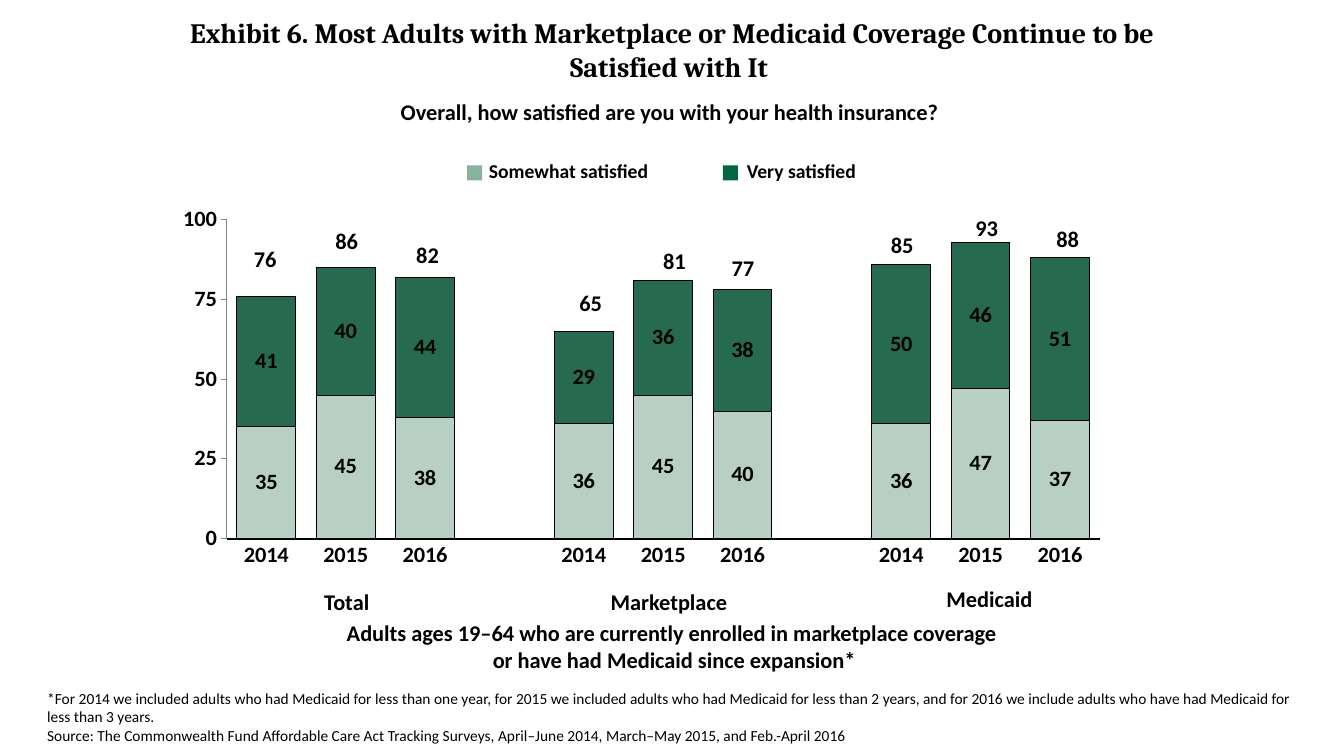
from pptx import Presentation
from pptx.chart.data import CategoryChartData
from pptx.dml.color import RGBColor
from pptx.enum.chart import XL_CHART_TYPE, XL_TICK_MARK
from pptx.enum.shapes import MSO_SHAPE
from pptx.enum.text import MSO_ANCHOR, MSO_AUTO_SIZE, PP_ALIGN
from pptx.oxml import parse_xml
from pptx.oxml.ns import nsdecls, qn
from pptx.util import Cm, Pt
from lxml.etree import SubElement

BLACK = "000000"
BODY = {"name": "Calibri", "size": Pt(16), "bold": True}
LEGEND = {**BODY, "size": Pt(14)}
NOTE = {**BODY, "size": Pt(11), "bold": False}
HEADING = {"name": "Cambria", "size": Pt(20), "bold": True}

YEARS = ["2014", "2015", "2016"]
# name, colour, opacity in percent, values
ANSWERS = [
    ("Somewhat satisfied", "B8D0C4", 100,
     [35, 45, 38, None, 36, 45, 40, None, 36, 47, 37]),
    ("Very satisfied", "005032", 85,
     [41, 40, 44, None, 29, 36, 38, None, 50, 46, 51]),
]
# text, left, top
TOTALS = [
    ("76", 6.15, 6.05), ("86", 8.2, 5.61), ("82", 10.24, 5.94),
    ("65", 14.35, 7.16), ("81", 16.46, 6.1), ("77", 18.19, 6.27),
    ("85", 22.2, 5.69), ("93", 24.33, 5.26), ("88", 26.37, 5.56),
]
# text, left, top, width
GROUPS = [
    ("Total", 7.92, 14.69, 2.06),
    ("Marketplace", 15.14, 14.69, 3.96),
    ("Medicaid", 23.6, 14.61, 2.9),
]
# text, colour, swatch left, label left, label width
KEYS = [
    ("Somewhat satisfied", "89B19C", 11.77, 12.07, 4.57),
    ("Very satisfied", "00673F", 18.22, 18.57, 3.3),
]


def rgb(value):
    return RGBColor.from_string(value)


def format_font(font, values):
    for name, value in values.items():
        setattr(font, name, value)
    font.color.rgb = rgb(BLACK)


def write(frame, paragraphs, values, align):
    frame.text = "\n".join(paragraphs)
    for para in frame.paragraphs:
        para.alignment = align
        for span in para.runs:
            format_font(span.font, values)


def add_text(page, paragraphs, left, top, width, height=0.94,
             values=BODY, align=PP_ALIGN.LEFT, wrap=True):
    box = page.shapes.add_textbox(Cm(left), Cm(top), Cm(width), Cm(height))
    frame = box.text_frame
    write(frame, paragraphs, values, align)
    frame.word_wrap = wrap
    frame.auto_size = MSO_AUTO_SIZE.SHAPE_TO_FIT_TEXT


def set_title(page, text):
    title = page.shapes.title
    place = {"left": Cm(4.24), "top": Cm(0.23), "width": Cm(25.4), "height": Cm(2.03)}
    for name, value in place.items():
        setattr(title, name, value)
    write(title.text_frame, [text], HEADING, PP_ALIGN.CENTER)
    title.text_frame.vertical_anchor = MSO_ANCHOR.MIDDLE


def add_legend_key(page, text, colour, swatch_left, label_left, width):
    swatch = page.shapes.add_shape(
        MSO_SHAPE.RECTANGLE, Cm(swatch_left), Cm(4.17), Cm(0.38), Cm(0.38))
    swatch.shadow.inherit = False
    swatch.fill.solid()
    swatch.fill.fore_color.rgb = rgb(colour)
    swatch.line.fill.background()
    add_text(page, [text], label_left, 3.89, width, 0.86, LEGEND, wrap=False)


def set_line(line, colour, width):
    line.color.rgb = rgb(colour)
    line.width = Pt(width)


def set_plot_area(chart, x, y, w, h):
    """Fix the inner plot area as fractions of the chart."""
    area = chart._chartSpace.chart.plotArea
    for old in area.findall(qn("c:layout")):
        area.remove(old)
    sizes = "".join(f'<c:{key} val="{value}"/>'
                    for key, value in zip("xywh", (x, y, w, h)))
    area.insert(0, parse_xml(
        f'<c:layout {nsdecls("c")}><c:manualLayout><c:layoutTarget val="inner"/>'
        f'<c:xMode val="edge"/><c:yMode val="edge"/>{sizes}'
        '</c:manualLayout></c:layout>'))


def format_series(series, colour, opacity):
    fill = series.format.fill
    fill.solid()
    fill.fore_color.rgb = rgb(colour)
    tint = series._element.find(qn("c:spPr")).find(qn("a:solidFill"))[0]
    SubElement(tint, qn("a:alpha")).set("val", str(opacity * 1000))
    set_line(series.format.line, BLACK, 0.75)
    labels = series.data_labels
    labels.show_value = True
    format_font(labels.font, BODY)


def format_axes(chart):
    years = chart.category_axis
    years.major_tick_mark = XL_TICK_MARK.NONE
    set_line(years.format.line, BLACK, 1.5)
    percent = chart.value_axis
    scale = {"minimum_scale": 0, "maximum_scale": 100, "major_unit": 25,
             "has_major_gridlines": False, "major_tick_mark": XL_TICK_MARK.OUTSIDE}
    for name, value in scale.items():
        setattr(percent, name, value)
    percent.tick_labels.number_format = "0"
    percent.tick_labels.number_format_is_linked = False
    set_line(percent.format.line, "868686", 0.75)


def add_satisfaction_chart(page):
    data = CategoryChartData(number_format="0")
    data.categories = YEARS + [""] + YEARS + [""] + YEARS
    for name, _, _, values in ANSWERS:
        data.add_series(name, values)
    chart = page.shapes.add_chart(
        XL_CHART_TYPE.COLUMN_STACKED, Cm(4.47), Cm(4.23), Cm(24.34), Cm(10.11), data).chart
    format_font(chart.font, BODY)
    chart.has_legend = False
    chart.has_title = False
    plot = chart.plots[0]
    plot.gap_width = 35
    plot.overlap = 100
    plot.vary_by_categories = False
    for series, (_, colour, opacity, _) in zip(plot.series, ANSWERS):
        format_series(series, colour, opacity)
    format_axes(chart)
    set_plot_area(chart, 0.051, 0.133, 0.904, 0.816)


def main():
    deck = Presentation()
    deck.slide_width, deck.slide_height = Cm(33.87), Cm(19.05)
    page = deck.slides.add_slide(deck.slide_layouts[5])
    set_title(page, "Exhibit 6. Most Adults with Marketplace or Medicaid Coverage "
                    "Continue to be Satisfied with It ")
    add_text(page, ["Overall, how satisfied are you with your health insurance? "],
             4.24, 2.34, 25.4, align=PP_ALIGN.CENTER)
    add_satisfaction_chart(page)
    for key in KEYS:
        add_legend_key(page, *key)
    for text, left, top in TOTALS:
        add_text(page, [text], left, top, 1.27)
    for text, left, top, width in GROUPS:
        add_text(page, [text], left, top, width)
    add_text(page, ["Adults ages 19–64 who are currently enrolled in marketplace coverage "
                    "\vor have had Medicaid since expansion*"],
             4.98, 15.48, 24.03, 1.63, align=PP_ALIGN.CENTER)
    add_text(page, ["*For 2014 we included adults who had Medicaid for less than one year, "
                    "for 2015 we included adults who had Medicaid for less than 2 years, "
                    "and for 2016 we include adults who have had Medicaid for less than "
                    "3 years.",
                    "Source: The Commonwealth Fund Affordable Care Act Tracking Surveys, "
                    "April–June 2014, March–May 2015, and Feb.-April 2016"],
             0.94, 17.24, 32, 1.68, NOTE)
    deck.save("out.pptx")


if __name__ == "__main__":
    main()
